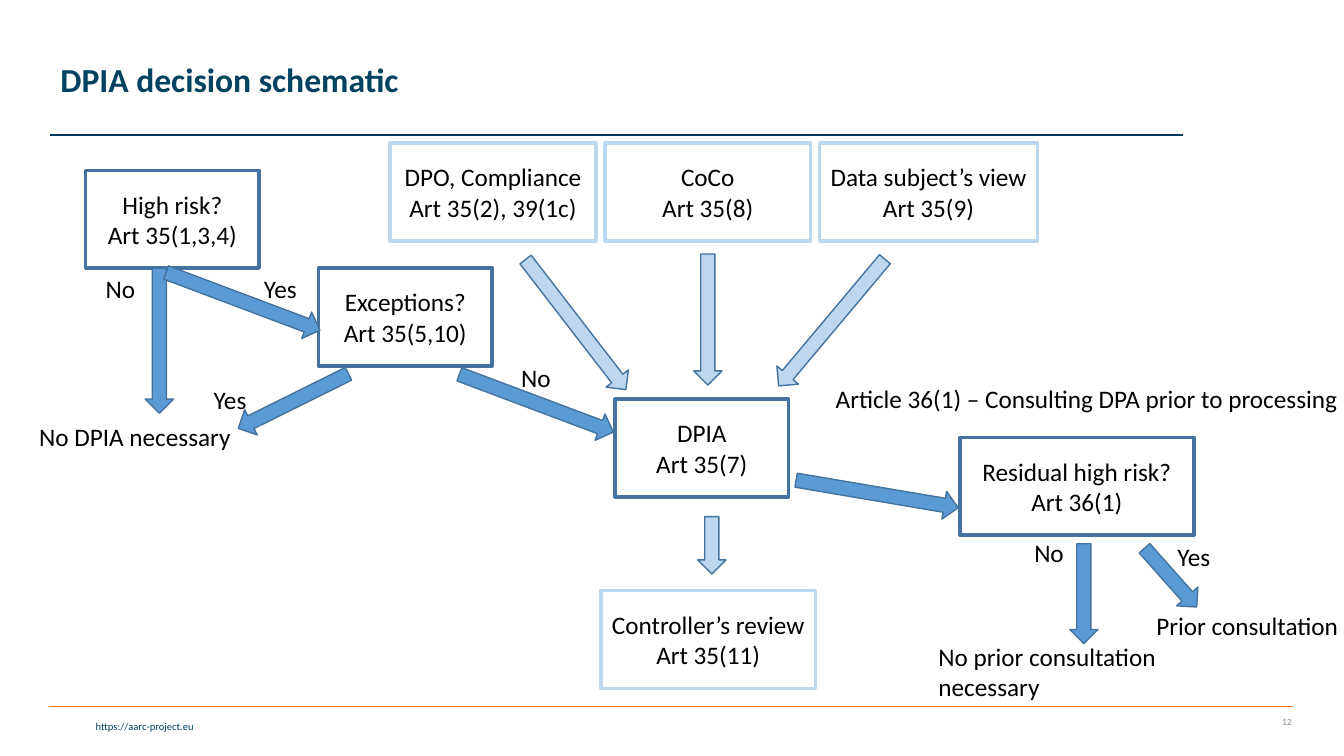
import pptx
import pptx.dml.color
import pptx.enum.shapes
import pptx.enum.text
import pptx.oxml.ns
import pptx.util
from lxml import etree

Inches = pptx.util.Inches
Align = pptx.enum.text.PP_ALIGN
Anchor = pptx.enum.text.MSO_ANCHOR
Shape = pptx.enum.shapes.MSO_SHAPE

COLORS = {
    "navy": "004361", "rule": "003959", "link": "003F5E", "orange": "F57B20",
    "gray": "8C8C8C", "black": "000000", "outline": "43739E",
    "main": "5B9BD5", "pale": "BDD7EE",
}
WIDTH, HEIGHT = 13.33, 7.5
STEP_WIDTH, STEP_HEIGHT = 1.72, 0.97
ARROW_WIDTH = 0.28
LABEL_HEIGHT = 0.4
LABEL_WIDTHS = {"No": 0.5, "Yes": 0.53}


def color(name):
    """Return the named colour."""
    return pptx.dml.color.RGBColor.from_string(COLORS[name])


def write(frame, lines, size=18, ink="black", align=Align.LEFT, bold=False):
    """Fill a text frame with one paragraph per line."""
    frame.text = "\n".join(lines)
    for para in frame.paragraphs:
        para.alignment = align
        para.font.name = "Calibri"
        para.font.size = pptx.util.Pt(size)
        para.font.bold = bold
        para.font.color.rgb = color(ink)


def add_label(page, origin, left, top, text, width=None, wrap=False, height=LABEL_HEIGHT, **style):
    """Place a text label relative to the origin of its region."""
    width = width or LABEL_WIDTHS[text]
    box = page.shapes.add_textbox(
        Inches(origin[0] + left), Inches(origin[1] + top), Inches(width), Inches(height))
    box.text_frame.word_wrap = wrap
    write(box.text_frame, [text], **style)
    return box


def add_step(page, origin, left, top, lines, width=STEP_WIDTH, outline="outline"):
    """Place an outlined step box relative to the origin of its region."""
    box = page.shapes.add_shape(
        Shape.RECTANGLE, Inches(origin[0] + left), Inches(origin[1] + top),
        Inches(width), Inches(STEP_HEIGHT))
    box.shadow.inherit = False
    box.fill.background()
    box.line.color.rgb = color(outline)
    box.line.width = pptx.util.Pt(2.5)
    frame = box.text_frame
    frame.word_wrap = True
    frame.vertical_anchor = Anchor.MIDDLE
    frame.margin_left = frame.margin_right = Inches(0.05)
    write(frame, lines, align=Align.CENTER)


def add_arrow(page, origin, center_x, center_y, length, angle=0, fill="main"):
    """Place a block arrow around a center relative to its region."""
    arrow = page.shapes.add_shape(
        Shape.DOWN_ARROW, Inches(origin[0] + center_x - ARROW_WIDTH / 2),
        Inches(origin[1] + center_y - length / 2), Inches(ARROW_WIDTH), Inches(length))
    arrow.rotation = angle
    arrow.shadow.inherit = False
    arrow.fill.solid()
    arrow.fill.fore_color.rgb = color(fill)
    arrow.line.color.rgb = color("outline")
    arrow.line.width = pptx.util.Pt(1)


def add_rule(page, left, right, top, ink):
    """Draw a thin horizontal rule."""
    rule = page.shapes.add_connector(
        pptx.enum.shapes.MSO_CONNECTOR.STRAIGHT,
        Inches(left), Inches(top), Inches(right), Inches(top))
    rule.line.color.rgb = color(ink)
    rule.line.width = pptx.util.Pt(1)
    etree.SubElement(rule._element.spPr, pptx.oxml.ns.qn("a:effectLst"))


def add_header(page, origin):
    """Add the title and the rule below it."""
    title = add_label(page, origin, 0, 0, "DPIA decision schematic", 10.51, True, 1.45,
                      size=24, ink="navy", bold=True)
    title.text_frame.vertical_anchor = Anchor.MIDDLE
    title.text_frame.paragraphs[0].line_spacing = 0.9
    add_rule(page, origin[0], origin[0] + 11.23, origin[1] + 1.26, "rule")


def add_footer(page, origin):
    """Add the footer rule, web address and page number."""
    add_rule(page, origin[0] + 0.49, origin[0] + 12.82, origin[1], "orange")
    add_label(page, origin, 0.03, 0.08, "https://aarc-project.eu", 1.99, True, 0.23,
              size=7.5, ink="link", align=Align.RIGHT)
    number = add_label(page, origin, 12.1, 0, "12", 0.81, True, 0.3,
                       size=6.8, ink="gray", align=Align.RIGHT)
    number.text_frame.vertical_anchor = Anchor.MIDDLE


def add_screening(page, origin):
    """Add the questions that decide whether a DPIA is needed."""
    add_step(page, origin, 0.56, 0, ["High risk?", "Art 35(1,3,4)"])
    add_step(page, origin, 2.87, STEP_HEIGHT, ["Exceptions?", "Art 35(5,10)"])
    for arrow in [(1.29, 1.69, 1.44), (2.12, 1.3, 1.63, 290.6),
                  (5.03, 2.31, 1.63, 290.6), (2.62, 2.29, 1.22, 63.6)]:
        add_arrow(page, origin, *arrow)
    for label in [(0.66, 0.97, "No"), (2.23, 0.97, "Yes"), (4.78, 1.86, "No"),
                  (1.73, 2.07, "Yes"), (0, 2.44, "No DPIA necessary", 2.12)]:
        add_label(page, origin, *label)


def add_inputs(page, origin):
    """Add the row of inputs that feed the assessment."""
    inputs = [
        (["DPO, Compliance", "Art 35(2), 39(1c)"], 2.04, (1.84, 1.8, 1.63, 322.4)),
        (["CoCo", "Art 35(8)"], 2.04, (3.15, 1.75, 1.3, 0)),
        (["Data subject’s view", "Art 35(9)"], 2.16, (4.38, 1.78, 1.64, 40)),
    ]
    left, gap = 0, 0.09
    for lines, width, arrow in inputs:
        add_step(page, origin, left, 0, lines, width, "pale")
        add_arrow(page, origin, *arrow, fill="pale")
        left += width + gap


def add_assessment(page, origin):
    """Add the assessment, its review and the arrows leaving it."""
    add_step(page, origin, 0.14, 0, ["DPIA", "Art 35(7)"])
    add_step(page, origin, 0, 1.9, ["Controller’s review", "Art 35(11)"], 2.13, "pale")
    add_arrow(page, origin, 1.1, 1.45, 0.57, fill="pale")
    add_arrow(page, origin, 2.74, 0.94, 1.63, 279.6)


def add_consultation(page, origin):
    """Add the residual risk question and its two outcomes."""
    add_label(page, origin, 0, 0, "Article 36(1) – Consulting DPA prior to processing", 5.32, True)
    add_step(page, origin, 1.33, 0.59, ["Residual high risk?", "Art 36(1)"], 2.32)
    add_arrow(page, origin, 3.42, 1.98, 0.78, 318.4)
    add_arrow(page, origin, 2.56, 2.14, 0.99)
    for label in [(3.39, 1.57, "Yes"), (1.97, 1.53, "No"),
                  (3.18, 2.26, "Prior consultation", 2.02),
                  (1.02, 2.56, "No prior consultation necessary", 2.46, True, 0.71)]:
        add_label(page, origin, *label)


def main():
    """Build the slide and save the deck."""
    deck = pptx.Presentation()
    deck.slide_width, deck.slide_height = Inches(WIDTH), Inches(HEIGHT)
    page = deck.slides.add_slide(deck.slide_layouts[6])
    add_footer(page, (0, 7.01))
    add_header(page, (0.5, 0.08))
    add_screening(page, (0.29, 1.69))
    add_inputs(page, (3.87, 1.42))
    add_assessment(page, (5.96, 3.96))
    add_consultation(page, (8.19, 3.75))
    deck.save("out.pptx")


if __name__ == "__main__":
    main()
